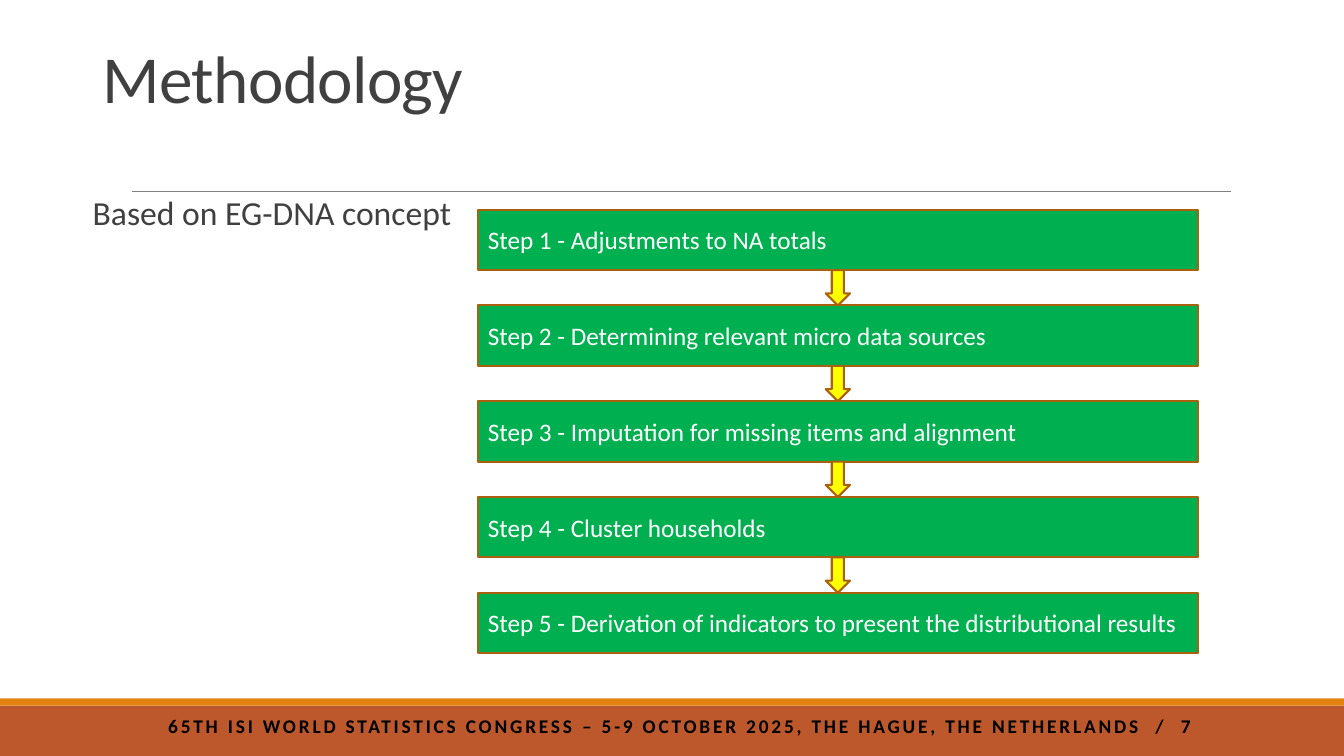
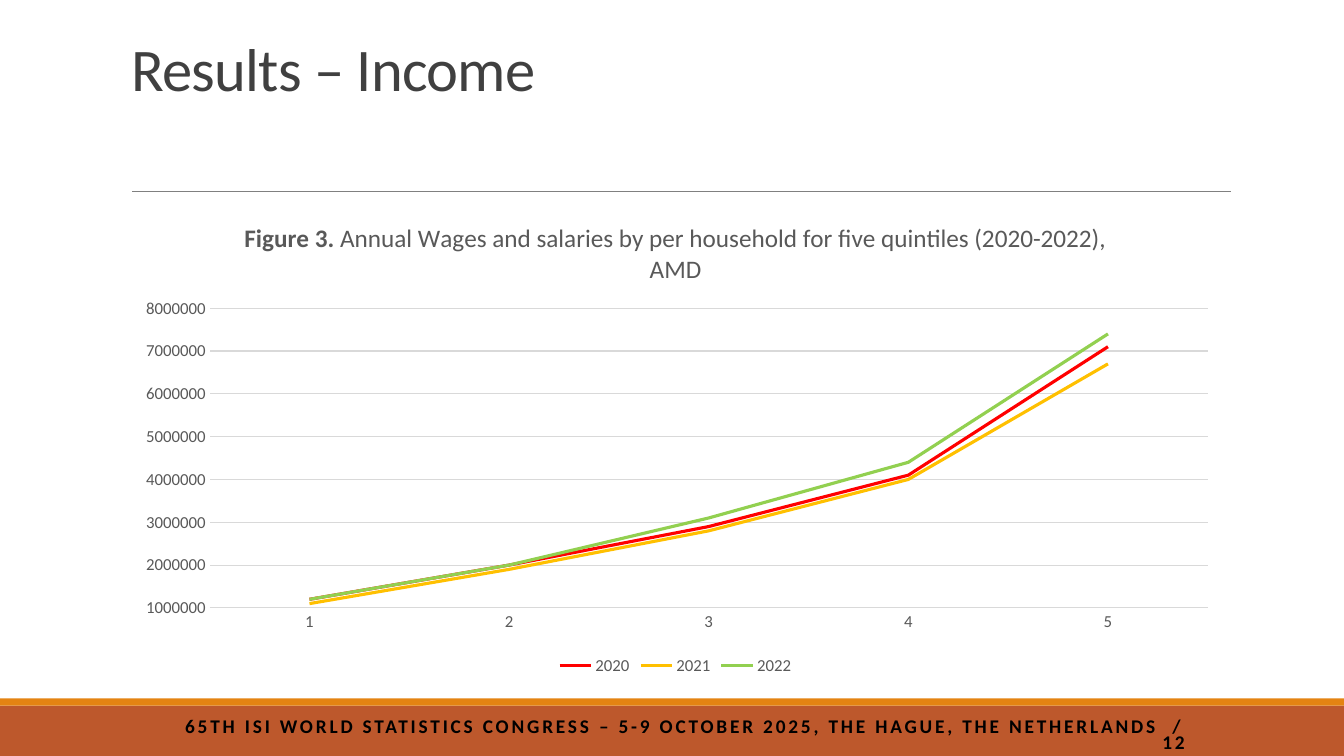
from collections import namedtuple

from lxml import etree
from pptx import Presentation
from pptx.chart.data import CategoryChartData
from pptx.dml.color import RGBColor
from pptx.enum.chart import XL_CHART_TYPE as ChartType
from pptx.enum.chart import XL_LEGEND_POSITION as LegendPosition
from pptx.enum.chart import XL_TICK_MARK as TickMark
from pptx.enum.shapes import MSO_CONNECTOR as Connector
from pptx.enum.shapes import MSO_SHAPE as Shape
from pptx.enum.text import MSO_ANCHOR as Anchor
from pptx.enum.text import MSO_AUTO_SIZE as AutoSize
from pptx.enum.text import PP_ALIGN as Align
from pptx.oxml.ns import qn
from pptx.util import Inches, Pt

Box = namedtuple("Box", "left top width height")

FONT = "Calibri"
TITLE_ONLY = 5
WHITE, BLACK = "FFFFFF", "000000"
DARK_GREY, CHART_GREY, GRID_GREY, RULE_GREY = "404040", "595959", "D9D9D9", "808080"
RUST, ORANGE, BROWN = "BD582C", "E48312", "A9610D"
GREEN, YELLOW = "00B050", "FFFF00"

FOOTER = "65TH ISI WORLD STATISTICS CONGRESS – 5-9 OCTOBER 2025, THE HAGUE, THE NETHERLANDS  /  "
STEPS = [
    "Step 1 - Adjustments to NA totals",
    "Step 2 - Determining relevant micro data sources",
    "Step 3 - Imputation for missing items and alignment",
    "Step 4 - Cluster households",
    "Step 5 - Derivation of indicators to present the distributional results",
]
QUINTILES = ["1", "2", "3", "4", "5"]
WAGES = [
    ("2020", "FF0000", [1200000, 2000000, 2900000, 4100000, 7100000]),
    ("2021", "FFC000", [1100000, 1900000, 2800000, 4000000, 6700000]),
    ("2022", "92D050", [1200000, 2000000, 3100000, 4400000, 7400000]),
]


def color(value):
    return RGBColor.from_string(value)


def inches(box):
    return [Inches(length) for length in box]


def style_font(font, size, text_color, bold=False):
    font.name = FONT
    font.size = Pt(size)
    font.bold = bold
    font.color.rgb = color(text_color)


def style_line(line, line_color, width):
    line.color.rgb = color(line_color)
    line.width = Pt(width)


def add_run(paragraph, text, size, text_color, bold=False, tracking=0):
    run = paragraph.add_run()
    run.text = text
    style_font(run.font, size, text_color, bold)
    if tracking:
        run.font._element.set("spc", str(round(tracking * 100)))


def space_paragraph(paragraph, line_spacing, before=12, after=2):
    paragraph.line_spacing = line_spacing
    paragraph.space_before = Pt(before)
    paragraph.space_after = Pt(after)


def add_block(slide, preset, box, fill, outline=None):
    shape = slide.shapes.add_shape(preset, *inches(box))
    shape.shadow.inherit = False
    shape.fill.solid()
    shape.fill.fore_color.rgb = color(fill)
    if outline:
        style_line(shape.line, outline, 1.5)
    else:
        shape.line.fill.background()
    return shape


def add_text_box(slide, box):
    frame = slide.shapes.add_textbox(*inches(box)).text_frame
    frame.word_wrap = True
    return frame


def add_bands(slide, box):
    strip = 0.07
    add_block(slide, Shape.RECTANGLE, box, RUST)
    add_block(slide, Shape.RECTANGLE, Box(box.left, box.top - strip, box.width, strip), ORANGE)


def add_rule(slide, box):
    left, top, width, height = box
    rule = slide.shapes.add_connector(
        Connector.STRAIGHT, *inches((left, top, left + width, top + height)))
    style_line(rule.line, RULE_GREY, 0.5)
    etree.SubElement(rule._element.spPr, qn("a:effectLst"))


def add_footer(slide, box, page):
    paragraph = add_text_box(slide, box).paragraphs[0]
    paragraph.alignment = Align.RIGHT
    space_paragraph(paragraph, 0.7)
    add_run(paragraph, FOOTER + page, 13.8, BLACK, bold=True, tracking=2)


def set_title(slide, box, text, size):
    title = slide.shapes.title
    title.left, title.top, title.width, title.height = inches(box)
    frame = title.text_frame
    frame.auto_size = AutoSize.NONE
    frame.vertical_anchor = Anchor.BOTTOM
    paragraph = frame.paragraphs[0]
    paragraph.alignment = Align.LEFT
    space_paragraph(paragraph, 0.85, 0, 0)
    add_run(paragraph, text, size, DARK_GREY, tracking=-0.5)


def add_slide(presentation, title, title_box, title_size, page):
    slide = presentation.slides.add_slide(presentation.slide_layouts[TITLE_ONLY])
    add_bands(slide, Box(0, 7, 13.33, 0.5))
    add_rule(slide, Box(1.31, 1.9, 10.9, 0))
    set_title(slide, title_box, title, title_size)
    add_footer(slide, Box(1.55, 7.1, 10.37, 0.34), page)
    return slide


def add_lead_text(slide, box, text):
    frame = add_text_box(slide, box)
    frame.margin_left = frame.margin_right = 0
    paragraph = frame.paragraphs[0]
    space_paragraph(paragraph, 0.9)
    add_run(paragraph, text, 24, DARK_GREY)


def add_steps(slide, box, steps):
    step_height, arrow_width = 0.6, 0.24
    gap = (box.height - len(steps) * step_height) / (len(steps) - 1)
    for index, text in enumerate(steps):
        top = box.top + index * (step_height + gap)
        step = add_block(slide, Shape.RECTANGLE,
                         Box(box.left, top, box.width, step_height), GREEN, BROWN)
        frame = step.text_frame
        frame.word_wrap = True
        frame.vertical_anchor = Anchor.MIDDLE
        paragraph = frame.paragraphs[0]
        paragraph.alignment = Align.LEFT
        add_run(paragraph, text, 18, WHITE)
        if index:
            arrow_left = box.left + (box.width - arrow_width) / 2
            add_block(slide, Shape.DOWN_ARROW,
                      Box(arrow_left, top - gap, arrow_width, gap), YELLOW, BROWN)


def place_plot(chart, box):
    plot_area = chart._chartSpace.chart.plotArea
    for old_layout in plot_area.findall(qn("c:layout")):
        plot_area.remove(old_layout)
    layout = etree.Element(qn("c:layout"))
    plot_area.insert(0, layout)
    manual = etree.SubElement(layout, qn("c:manualLayout"))
    settings = [("layoutTarget", "inner"), ("xMode", "edge"), ("yMode", "edge"),
                ("x", box.left), ("y", box.top), ("w", box.width), ("h", box.height)]
    for name, value in settings:
        etree.SubElement(manual, qn("c:" + name)).set("val", str(value))


def style_axes(chart):
    for axis in (chart.category_axis, chart.value_axis):
        axis.major_tick_mark = axis.minor_tick_mark = TickMark.NONE
        style_font(axis.tick_labels.font, 12, CHART_GREY)
    style_line(chart.category_axis.format.line, GRID_GREY, 0.75)
    values = chart.value_axis
    values.minimum_scale, values.maximum_scale = 1000000, 8000000
    values.major_unit = 1000000
    values.format.line.fill.background()
    style_line(values.major_gridlines.format.line, GRID_GREY, 0.75)


def add_wage_chart(slide, box):
    data = CategoryChartData(number_format="General")
    data.categories = QUINTILES
    for year, _, wages in WAGES:
        data.add_series(year, wages)
    chart = slide.shapes.add_chart(ChartType.LINE, *inches(box), data).chart
    style_font(chart.font, 10, BLACK)
    chart.has_title = True
    heading = chart.chart_title.text_frame.paragraphs[0]
    add_run(heading, "Figure 3.", 18, CHART_GREY, bold=True)
    add_run(heading, " Annual Wages and salaries by per household for five quintiles (2020-2022), AMD",
            18, CHART_GREY)
    chart.chart_title.include_in_layout = False
    chart.has_legend = True
    chart.legend.position = LegendPosition.BOTTOM
    chart.legend.include_in_layout = False
    style_font(chart.legend.font, 12, CHART_GREY)
    style_axes(chart)
    plot = chart.plots[0]
    plot.vary_by_categories = False
    for series, (_, line_color, _) in zip(plot.series, WAGES):
        series.smooth = False
        style_line(series.format.line, line_color, 2.25)
    place_plot(chart, Box(0.08, 0.22, 0.9, 0.63))


def build_methodology(presentation):
    slide = add_slide(presentation, "Methodology", Box(0.92, 0.19, 11, 1.02), 48, "7")
    add_lead_text(slide, Box(0.92, 1.9, 11.5, 4.86), "Based on EG-DNA concept")
    add_steps(slide, Box(4.74, 2.08, 7.14, 4.4), STEPS)


def build_income(presentation):
    slide = add_slide(presentation, "Results – Income", Box(1.2, 0.31, 11, 0.77), 43.2, "12 ")
    add_wage_chart(slide, Box(1.2, 2.02, 11, 4.72))


def main():
    presentation = Presentation()
    presentation.slide_width = Inches(13.33)
    presentation.slide_height = Inches(7.5)
    build_methodology(presentation)
    build_income(presentation)
    presentation.save("out.pptx")


if __name__ == "__main__":
    main()
